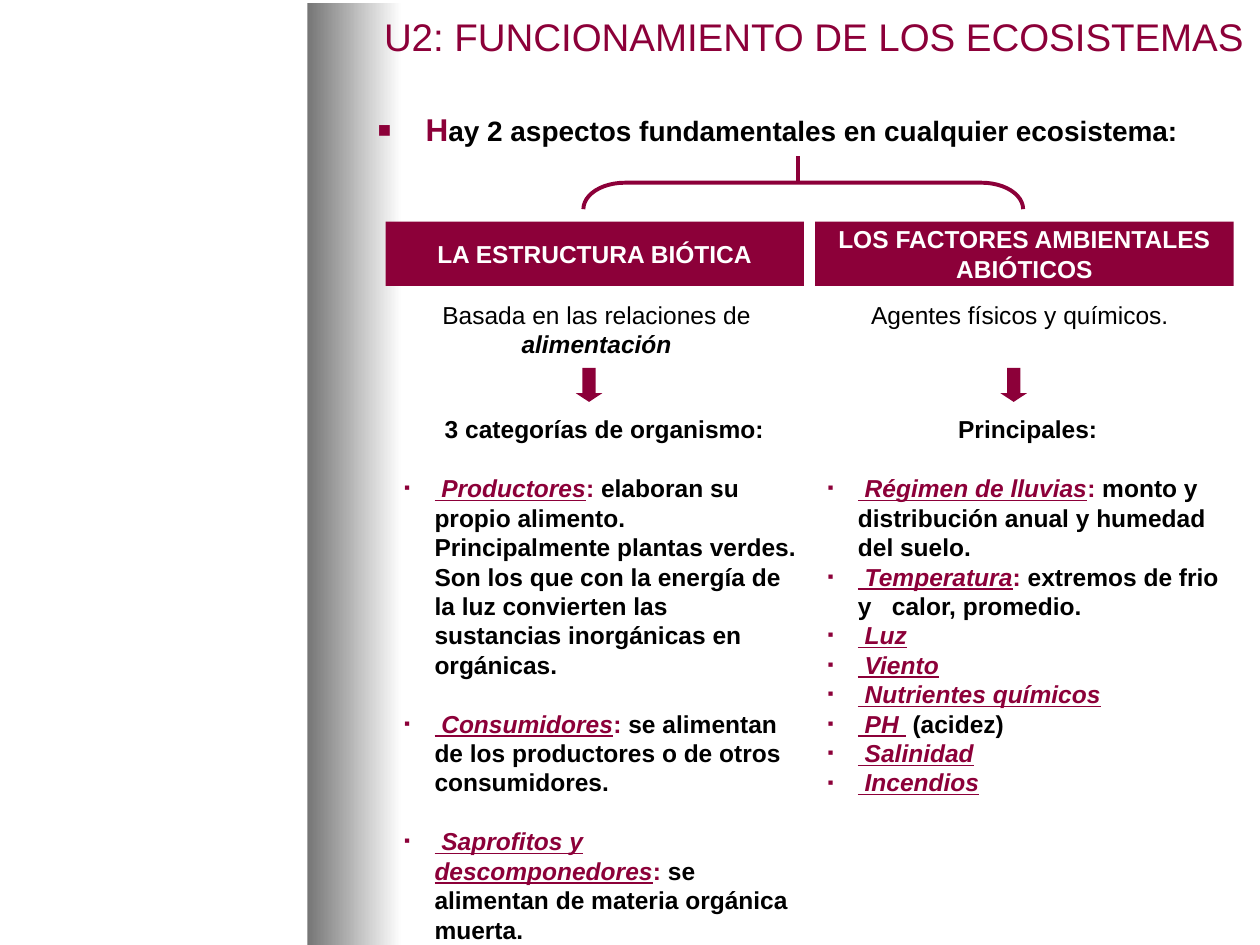
from lxml.etree import SubElement
from pptx import Presentation
from pptx.dml.color import RGBColor
from pptx.enum.shapes import MSO_CONNECTOR, MSO_SHAPE
from pptx.enum.text import MSO_ANCHOR, PP_ALIGN
from pptx.oxml.ns import qn
from pptx.util import Emu, Pt

HUES = {"wine": "8C0039", "ink": "000000", "white": "FFFFFF", "gray": "767676"}
LINE = 16.8

TITLE = "U2: FUNCIONAMIENTO DE LOS ECOSISTEMAS"
LEAD = [("H", "wine", "", 18),
        ("ay 2 aspectos fundamentales en cualquier ecosistema:", "ink", "", 16)]
SIDES = [
    {"head": "LA ESTRUCTURA BIÓTICA", "left": 306, "note_x": 313, "list_x": 311,
     "arrow_x": 457, "gap": LINE,
     "note": [("Basada en las relaciones de ", "ink", ""), ("alimentación", "ink", "bi")],
     "topic": " 3 categorías de organismo:",
     "items": [
         (" Productores", ":", " elaboran su propio alimento. Principalmente plantas verdes. "
          "Son los que con la energía de la luz convierten las sustancias inorgánicas en orgánicas."),
         (" Consumidores", ":", " se alimentan de los productores o de otros consumidores."),
         (" Saprofitos y descomponedores", ":", " se alimentan de materia orgánica muerta.")]},
    {"head": "LOS FACTORES AMBIENTALES ABIÓTICOS", "left": 647, "note_x": 649, "list_x": 647,
     "arrow_x": 794, "gap": 0,
     "note": [("Agentes físicos y químicos.", "ink", "")],
     "topic": " Principales:",
     "items": [
         (" Régimen de lluvias", ":", " monto y distribución anual y humedad del suelo."),
         (" Temperatura", ":", " extremos de frio y   calor, promedio."),
         (" Luz",), (" Viento",), (" Nutrientes químicos",),
         (" PH ", " ", "(acidez)"), (" Salinidad",), (" Incendios",)]},
]


def px(n):
    return Emu(n * 9144)


def hue(name):
    return RGBColor.from_string(HUES[name])


def shape(kind, x, y, w, h, fill=None):
    made = slide.shapes.add_shape(kind, px(x), px(y), px(w), px(h))
    made.shadow.inherit = False
    if fill:
        made.fill.solid()
        made.fill.fore_color.rgb = hue(fill)
        made.line.fill.background()
    return made


def box(x, y, w, h):
    frame = slide.shapes.add_textbox(px(x), px(y), px(w), px(h)).text_frame
    frame.word_wrap = True
    return frame


def bullet(para, char, indent):
    props = para._p.get_or_add_pPr()
    props.set("marL", str(px(indent)))
    props.set("indent", str(-px(indent)))
    tint = SubElement(props, qn("a:buClr"))
    SubElement(tint, qn("a:srgbClr"), val=HUES["wine"])
    SubElement(props, qn("a:buSzPct"), val="70000")
    SubElement(props, qn("a:buFont"), typeface="Arial")
    SubElement(props, qn("a:buChar"), char=char)


def write(para, runs, size=14, bold=None, align=PP_ALIGN.LEFT):
    para.alignment = align
    para.font.name = "Arial"
    para.font.size = Pt(size)
    para.font.bold = bold
    for text, tone, marks, *own in runs:
        run = para.add_run()
        run.text = text
        run.font.color.rgb = hue(tone)
        if own:
            run.font.size = Pt(own[0])
        if "b" in marks:
            run.font.bold = True
        if "i" in marks:
            run.font.italic = True
        if "u" in marks:
            run.font.underline = True


def column(side):
    head = shape(MSO_SHAPE.RECTANGLE, side["left"], 176, 332, 51, "wine").text_frame
    head.word_wrap = True
    head.vertical_anchor = MSO_ANCHOR.MIDDLE
    write(head.paragraphs[0], [(side["head"], "white", "")], bold=True, align=PP_ALIGN.CENTER)

    note = box(side["note_x"], 233, 321, 57)
    write(note.paragraphs[0], side["note"], align=PP_ALIGN.CENTER)

    arrow = shape(MSO_SHAPE.DOWN_ARROW, side["arrow_x"], 292, 21, 27, "wine")
    arrow.adjustments[0] = 0.5
    arrow.adjustments[1] = 0.33

    body = box(side["list_x"], 324, 332, 415)
    write(body.paragraphs[0], [(side["topic"], "ink", "")], bold=True, align=PP_ALIGN.CENTER)
    for i, parts in enumerate(side["items"]):
        para = body.add_paragraph()
        para.space_before = Pt(side["gap"] if i else LINE)
        bullet(para, "▪", 24)
        styles = [("wine", "iu"), ("wine", ""), ("ink", "")]
        write(para, [(t, *s) for t, s in zip(parts, styles)], bold=True)


deck = Presentation()
deck.slide_width, deck.slide_height = px(1000), px(750)
slide = deck.slides.add_slide(deck.slide_layouts[6])

band = shape(MSO_SHAPE.RECTANGLE, 244, 2, 75, 748)
band.line.fill.background()
band.fill.gradient()
band.fill.gradient_angle = 0
for stop, tone, spot in zip(band.fill.gradient_stops, ("gray", "white"), (0, 1)):
    stop.color.rgb = hue(tone)
    stop.position = spot

lead = box(290, 86, 700, 48).paragraphs[0]
lead.line_spacing = 0.9
bullet(lead, "■", 38)
write(lead, LEAD, bold=True)

for side in SIDES:
    column(side)

brace = shape(MSO_SHAPE.RIGHT_BRACKET, 627, -19, 21, 349)
brace.rotation = 270
brace.adjustments[0] = 1.57
brace.fill.background()
stem = slide.shapes.add_connector(MSO_CONNECTOR.STRAIGHT, px(633), px(144), px(633), px(124))
SubElement(stem._element.spPr, qn("a:effectLst"))
for part in (brace, stem):
    part.line.color.rgb = hue("wine")
    part.line.width = Pt(2.25)
SubElement(stem._element.spPr, qn("a:effectLst")) if stem._element.spPr[-1].tag == qn("a:ln") else None

title = box(176, 0, 821, 57)
title.vertical_anchor = MSO_ANCHOR.MIDDLE
write(title.paragraphs[0], [(TITLE, "wine", "")], size=22, align=PP_ALIGN.RIGHT)

deck.save("out.pptx")
